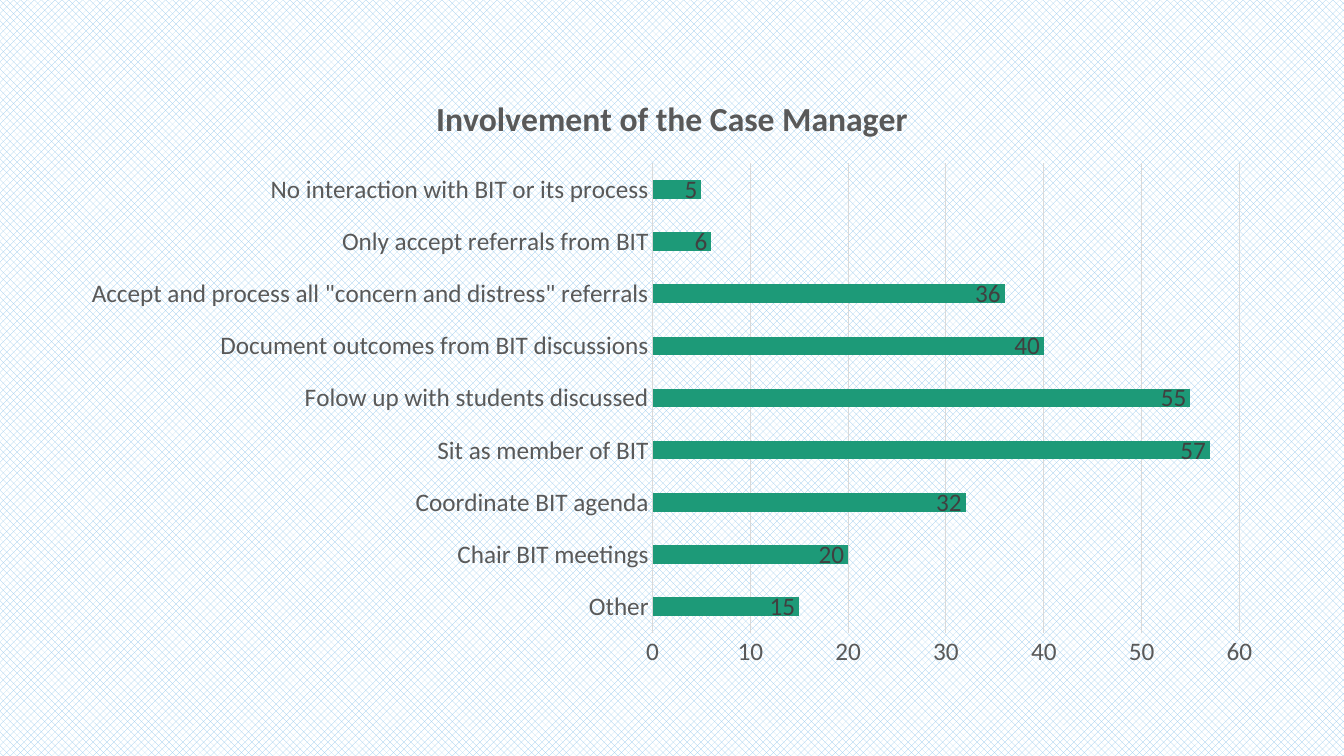
from dataclasses import dataclass

from pptx import Presentation
from pptx import util as u
from pptx.chart.data import CategoryChartData
from pptx.dml.color import RGBColor
from pptx.enum import chart as ch
from pptx.enum import dml


@dataclass(frozen=True)
class Theme:
    face: str = "Calibri"
    title: int = 24
    body: int = 18
    text: str = "595959"
    label: str = "404040"
    rule: str = "D9D9D9"
    bar: str = "1D9A78"
    dots: str = "94C8ED"
    paper: str = "FFFFFF"


THEME = Theme()

TITLE = "Involvement of the Case Manager"
ROLES = {
    "Other": 15,
    "Chair BIT meetings": 20,
    "Coordinate BIT agenda": 32,
    "Sit as member of BIT": 57,
    "Folow up with students discussed": 55,
    "Document outcomes from BIT discussions": 40,
    'Accept and process all "concern and distress" referrals': 36,
    "Only accept referrals from BIT": 6,
    "No interaction with BIT or its process": 5,
}


def rgb(code):
    return RGBColor.from_string(code)


def set_font(font, size, color, bold=False):
    font.name = THEME.face
    font.size = u.Pt(size)
    font.bold = bold
    font.color.rgb = rgb(color)


def set_rule(line):
    line.color.rgb = rgb(THEME.rule)
    line.width = u.Pt(0.75)


def paint_back(slide):
    fill = slide.background.fill
    fill.patterned()
    fill.pattern = dml.MSO_PATTERN.PERCENT_50
    fill.fore_color.rgb = rgb(THEME.dots)
    fill.back_color.rgb = rgb(THEME.paper)


def style_axes(chart):
    for axis in (chart.category_axis, chart.value_axis):
        axis.major_tick_mark = axis.minor_tick_mark = ch.XL_TICK_MARK.NONE
        set_font(axis.tick_labels.font, THEME.body, THEME.text)
    set_rule(chart.category_axis.format.line)

    scale = chart.value_axis
    scale.minimum_scale, scale.maximum_scale, scale.major_unit = 0, 60, 10
    scale.format.line.fill.background()
    set_rule(scale.major_gridlines.format.line)


def style_bars(plot):
    plot.gap_width = 182
    plot.vary_by_categories = False
    bars = plot.series[0]
    bars.format.fill.solid()
    bars.format.fill.fore_color.rgb = rgb(THEME.bar)
    labels = bars.data_labels
    labels.show_value = True
    labels.position = ch.XL_LABEL_POSITION.INSIDE_END
    set_font(labels.font, THEME.body, THEME.label)


def add_roles(slide, left, top, width, height):
    data = CategoryChartData()
    data.categories = list(ROLES)
    data.add_series("Series 1", list(ROLES.values()))
    chart = slide.shapes.add_chart(
        ch.XL_CHART_TYPE.BAR_CLUSTERED, left, top, width, height, data
    ).chart
    chart.has_legend = False

    # Heading
    frame = chart.chart_title.text_frame
    frame.text = TITLE
    set_font(frame.paragraphs[0].font, THEME.title, THEME.text, bold=True)
    chart.chart_title.include_in_layout = False

    # Axes and bars
    style_axes(chart)
    style_bars(chart.plots[0])


def main():
    deck = Presentation()
    deck.slide_width = u.Inches(13.33)
    deck.slide_height = u.Inches(7.5)
    slide = deck.slides.add_slide(deck.slide_layouts[6])
    paint_back(slide)
    add_roles(slide, u.Inches(0.67), u.Inches(0.72), u.Inches(11.99), u.Inches(6.02))
    deck.save("out.pptx")


if __name__ == "__main__":
    main()
